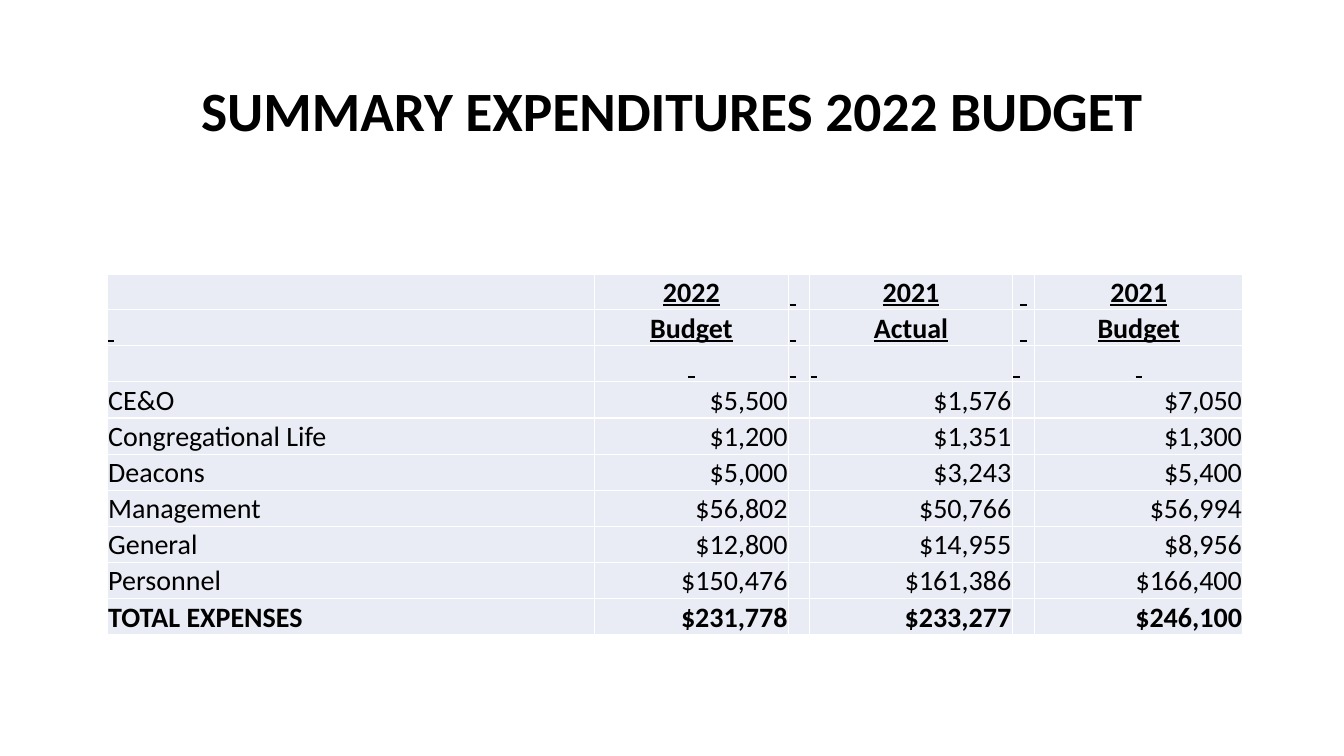
import pptx
import pptx.dml.color
import pptx.enum.text
import pptx.oxml
import pptx.oxml.ns
import pptx.util

Pt = pptx.util.Pt
ALIGN = pptx.enum.text.PP_ALIGN
ANCHOR = pptx.enum.text.MSO_ANCHOR
COLORS = {"text": "000000", "cell": "E9EBF5", "border": "FFFFFF"}
FONT = "Calibri"

COL_WIDTHS = [347.8, 139, 15.1, 144.7, 15.8, 149]
ROW_HEIGHTS = [16] + [25.8] * 9
VALUE_COLS = [1, 3, 5]
HEADINGS = [["2022", "2021", "2021"], ["Budget", "Actual", "Budget"]]
EXPENSES = [
    ["CE&O", "$5,500", "$1,576", "$7,050"],
    ["Congregational Life", "$1,200", "$1,351", "$1,300"],
    ["Deacons", "$5,000", "$3,243", "$5,400"],
    ["Management", "$56,802", "$50,766", "$56,994"],
    ["General", "$12,800", "$14,955", "$8,956"],
    ["Personnel", "$150,476", "$161,386", "$166,400"],
    ["TOTAL EXPENSES", "$231,778", "$233,277", "$246,100"],
]
# Underlined blanks in the heading rows: (row, column) -> alignment
BLANK = chr(160)
BLANKS = {
    (0, 2): ALIGN.LEFT, (0, 4): ALIGN.CENTER,
    (1, 0): ALIGN.LEFT, (1, 2): ALIGN.LEFT, (1, 4): ALIGN.CENTER,
    (2, 1): ALIGN.CENTER, (2, 2): ALIGN.LEFT, (2, 3): ALIGN.LEFT,
    (2, 4): ALIGN.LEFT, (2, 5): ALIGN.CENTER,
}


def rgb(name):
    return pptx.dml.color.RGBColor.from_string(COLORS[name])


def set_attrs(obj, values):
    for name, value in values.items():
        setattr(obj, name, value)


def write(p, text, align, **font):
    p.alignment = align
    r = p.add_run()
    r.text = text
    set_attrs(r.font, {"name": FONT, **font})
    r.font.color.rgb = rgb("text")


def add_title(slide, left, top, width, height):
    sp = slide.shapes.title
    set_attrs(sp, {"left": Pt(left), "top": Pt(top),
                   "width": Pt(width), "height": Pt(height)})
    tf = sp.text_frame
    set_attrs(tf, {"word_wrap": True, "vertical_anchor": ANCHOR.MIDDLE,
                   "auto_size": pptx.enum.text.MSO_AUTO_SIZE.NONE})
    p = tf.paragraphs[0]
    p.line_spacing = 0.9
    write(p, "SUMMARY EXPENDITURES 2022 BUDGET", ALIGN.CENTER,
          size=Pt(39.6), bold=True)


def format_cell(cell):
    set_attrs(cell, {"margin_left": Pt(0.7), "margin_right": Pt(0.7),
                     "margin_top": Pt(0.7), "margin_bottom": Pt(0),
                     "vertical_anchor": ANCHOR.BOTTOM})
    cell.fill.solid()
    cell.fill.fore_color.rgb = rgb("cell")
    # Borders come before the fill in the cell properties
    tc_pr = cell._tc.get_or_add_tcPr()
    for i, side in enumerate(["lnL", "lnR", "lnT", "lnB"]):
        tc_pr.insert(i, pptx.oxml.parse_xml(
            f'<a:{side} {pptx.oxml.ns.nsdecls("a")} w="{Pt(1)}"><a:solidFill>'
            f'<a:srgbClr val="{COLORS["border"]}"/></a:solidFill></a:{side}>'))


def add_expenses_table(slide, left, top):
    tbl = slide.shapes.add_table(
        len(ROW_HEIGHTS), len(COL_WIDTHS), Pt(left), Pt(top),
        Pt(sum(COL_WIDTHS)), Pt(sum(ROW_HEIGHTS))).table
    set_attrs(tbl, {"first_row": False, "horz_banding": False})
    for col, width in zip(tbl.columns, COL_WIDTHS):
        col.width = Pt(width)
    for row, height in zip(tbl.rows, ROW_HEIGHTS):
        row.height = Pt(height)
    for cell in tbl.iter_cells():
        format_cell(cell)

    def fill_cell(row, col, text, align, **font):
        write(tbl.cell(row, col).text_frame.paragraphs[0], text, align,
              size=Pt(20), **font)

    # Headings
    for row, labels in enumerate(HEADINGS):
        for col, label in zip(VALUE_COLS, labels):
            fill_cell(row, col, label, ALIGN.CENTER, bold=True, underline=True)
    for (row, col), align in BLANKS.items():
        fill_cell(row, col, BLANK, align, bold=True, underline=True)

    # Expenses, with the total in bold
    for row, (name, *values) in enumerate(EXPENSES, start=3):
        bold = name.startswith("TOTAL")
        fill_cell(row, 0, name, ALIGN.LEFT, bold=bold)
        for col, value in zip(VALUE_COLS, values):
            fill_cell(row, col, value, ALIGN.RIGHT, bold=bold)


def main():
    prs = pptx.Presentation()
    set_attrs(prs, {"slide_width": Pt(960), "slide_height": Pt(540)})
    slide = prs.slides.add_slide(prs.slide_layouts[5])
    add_title(slide, 66, 28.8, 828, 104.4)
    add_expenses_table(slide, 76.6, 196)
    prs.save("out.pptx")


if __name__ == "__main__":
    main()
